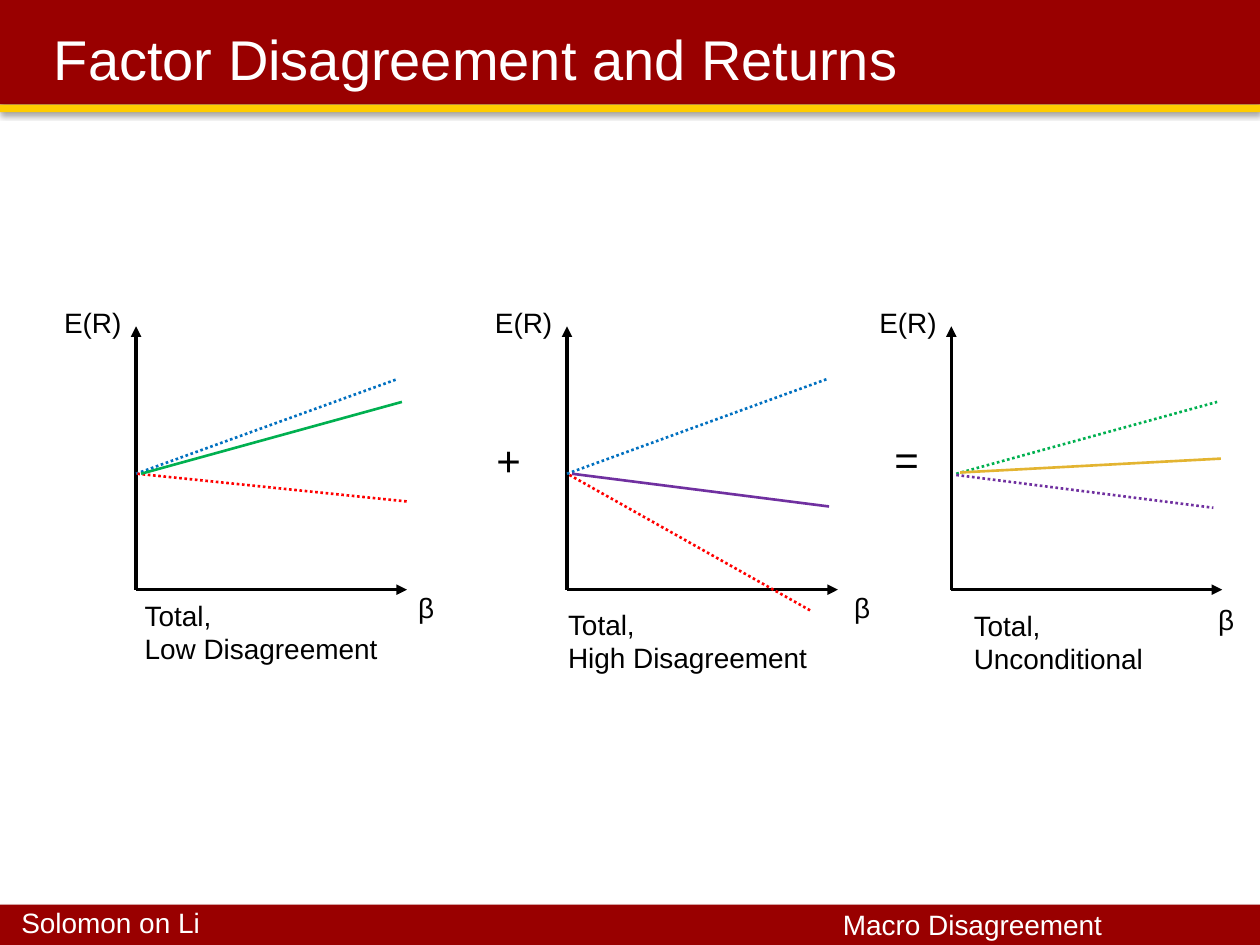
from lxml.etree import SubElement
from pptx import Presentation
from pptx.dml.color import RGBColor
from pptx.enum.dml import MSO_LINE
from pptx.enum.shapes import MSO_CONNECTOR, MSO_SHAPE
from pptx.enum.text import MSO_ANCHOR
from pptx.oxml.ns import qn
from pptx.util import Inches, Pt

deck = Presentation()
deck.slide_width = Inches(10)
deck.slide_height = Inches(7.5)
page = deck.slides.add_slide(deck.slide_layouts[6])
column = deck.slide_width / 100
row = deck.slide_height / 75
color = RGBColor.from_string


def add_text(text, left, top, width, height, size=16, ink="000000", inset=(1, 0.5), anchor=MSO_ANCHOR.TOP):
    box = page.shapes.add_textbox(int(left * column), int(top * row), int(width * column), int(height * row))
    frame = box.text_frame
    frame.word_wrap = True
    frame.vertical_anchor = anchor
    frame.margin_left = frame.margin_right = int(inset[0] * column)
    frame.margin_top = frame.margin_bottom = int(inset[1] * row)
    frame.text = text
    for para in frame.paragraphs:
        para.font.name = "Arial"
        para.font.size = Pt(size)
        para.font.color.rgb = color(ink)


def add_line(start_x, start_y, end_x, end_y, ink="000000", weight=1.5, dotted=False, arrow=False):
    connector = page.shapes.add_connector(
        MSO_CONNECTOR.STRAIGHT,
        int(start_x * column), int(start_y * row), int(end_x * column), int(end_y * row))
    connector.line.color.rgb = color(ink)
    connector.line.width = Pt(weight)
    if dotted:
        connector.line.dash_style = MSO_LINE.ROUND_DOT
    if arrow:
        SubElement(connector.line._get_or_add_ln(), qn("a:tailEnd"), type="triangle")
    SubElement(connector._element.spPr, qn("a:effectLst"))


bars = [
    (71.8, 3.2, "990000", 35, 1.8),
    (0, 8.3, "990000", 35, 1.8),
    (8.3, 0.6, "FFCC00", 38, 1.6),
]
for top, height, fill, opacity, distance in bars:
    bar = page.shapes.add_shape(MSO_SHAPE.RECTANGLE, 0, int(top * row), deck.slide_width, int(height * row))
    bar.fill.solid()
    bar.fill.fore_color.rgb = color(fill)
    bar.line.fill.background()
    bar.shadow.inherit = False
    effects = bar._element.spPr.find(qn("a:effectLst"))
    shadow = SubElement(effects, qn("a:outerShdw"), blurRad=str(Pt(3.1)), dist=str(Pt(distance)),
                        dir="5400000", rotWithShape="0")
    shade = SubElement(shadow, qn("a:srgbClr"), val="000000")
    SubElement(shade, qn("a:alpha"), val=str(opacity * 1000))

add_text("Solomon on Li", 1.7, 71.9, 32.7, 2.7, ink="FFFFFF", inset=(0, 0))
add_text("Macro Disagreement", 66.9, 72, 32.7, 2.7, ink="FFFFFF", inset=(0, 0))
add_text("Factor Disagreement and Returns", 3.3, 1.7, 90, 5.8, size=32, ink="FFFFFF", anchor=MSO_ANCHOR.MIDDLE)

axis_length = 21.5
axis_top, axis_bottom = 25.9, 46.8
panels = [
    {"origin": 10.8, "caption": ("Total,\nLow Disagreement", 10.5, 47, 21.4, 6.4), "beta": (32.2, 46.4),
     "returns": [(10.8, 37.6, 31.5, 30.1, "0070C0", True),
                 (10.9, 37.6, 32.3, 39.8, "FF0000", True),
                 (11.2, 37.6, 31.9, 31.9, "00B050", False)]},
    {"origin": 45, "caption": ("Total,\nHigh Disagreement", 44.1, 47.7, 25.2, 6.4), "beta": (66.8, 46.4),
     "returns": [(45, 37.6, 65.6, 30.1, "0070C0", True),
                 (45.4, 37.6, 65.8, 40.2, "7030A0", False),
                 (45.2, 37.7, 64.4, 48.5, "FF0000", True)]},
    {"origin": 75.5, "caption": ("Total,\nUnconditional", 76.3, 47.8, 25.2, 6.4), "beta": (95.7, 47.3),
     "returns": [(75.9, 37.6, 96.6, 31.9, "00B050", True),
                 (75.9, 37.7, 96.3, 40.3, "7030A0", True),
                 (76.2, 37.5, 96.9, 36.4, "E3B431", False)]},
]
for panel in panels:
    origin = panel["origin"]
    add_line(origin, axis_bottom, origin, axis_top, weight=2, arrow=True)
    add_line(origin, axis_bottom, origin + axis_length, axis_bottom, weight=2, arrow=True)
    add_text("E(R)", origin - 6.7, 23.8, 7.2, 3.7)
    add_text("β", *panel["beta"], 5.6, 3.7)
    for start_x, start_y, end_x, end_y, ink, dotted in panel["returns"]:
        add_line(start_x, start_y, end_x, end_y, ink=ink, dotted=dotted)
    add_text(*panel["caption"])

for sign, left, top in [("+", 38.4, 34), ("=", 70, 33.9)]:
    add_text(sign, left, top, 5.5, 5, size=24)

deck.save("out.pptx")
